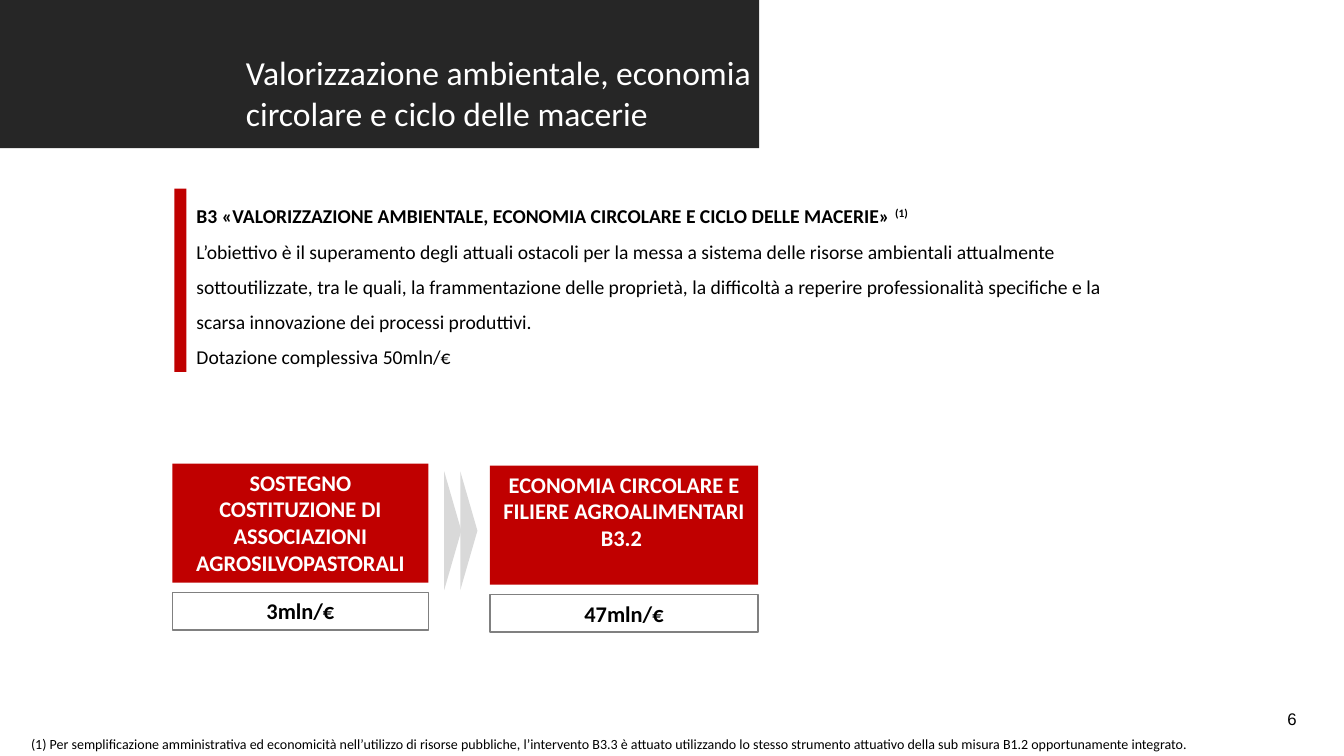
from pptx import Presentation
from pptx.dml.color import RGBColor
from pptx.enum.shapes import MSO_SHAPE
from pptx.enum.text import MSO_ANCHOR, PP_ALIGN
from pptx.util import Inches, Pt

RECTANGLE = MSO_SHAPE.RECTANGLE
TRIANGLE = MSO_SHAPE.ISOSCELES_TRIANGLE
TOP = MSO_ANCHOR.TOP
LEFT, CENTER, RIGHT = PP_ALIGN.LEFT, PP_ALIGN.CENTER, PP_ALIGN.RIGHT

RED, DARK, LIGHT_GRAY, GRAY = "C00000", "262626", "D9D9D9", "808080"
WHITE, BLACK = "FFFFFF", "000000"

TITLE = "Valorizzazione ambientale, economia circolare e ciclo delle macerie"
MEASURE = "B3 «VALORIZZAZIONE AMBIENTALE, ECONOMIA CIRCOLARE E CICLO DELLE MACERIE» "
OBJECTIVE = (
    "L’obiettivo è il superamento degli attuali ostacoli per la messa a sistema delle "
    "risorse ambientali attualmente sottoutilizzate, tra le quali, la frammentazione delle "
    "proprietà, la difficoltà a reperire professionalità specifiche e la scarsa innovazione "
    "dei processi produttivi."
)
BUDGET = "Dotazione complessiva 50mln/€"
FOOTNOTE = (
    "(1) Per semplificazione amministrativa ed economicità nell’utilizzo di risorse pubbliche, "
    "l’intervento B3.3 è attuato utilizzando lo stesso strumento attuativo della sub misura "
    "B1.2 opportunamente integrato."
)
# left, top, width, heading lines, amount
INTERVENTIONS = [
    (1.71, 4.6, 2.54, ["SOSTEGNO COSTITUZIONE DI ASSOCIAZIONI AGROSILVOPASTORALI"], "3mln/€"),
    (4.86, 4.62, 2.66, ["ECONOMIA CIRCOLARE E FILIERE AGROALIMENTARI", "B3.2 "], "47mln/€"),
]
HEADING_HEIGHT = 1.18
AMOUNT_OFFSET = 1.28


def color(hex_value):
    return RGBColor.from_string(hex_value)


def format_run(run, size, text_color, bold=False, font="Calibri"):
    run.font.name = font
    run.font.size = Pt(size)
    run.font.bold = bold
    run.font.color.rgb = color(text_color)


def write(shape, lines, size, text_color, align=LEFT, bold=False, font="Calibri", spacing=None):
    text_frame = shape.text_frame
    text_frame.word_wrap = True
    text_frame.vertical_anchor = TOP
    text_frame.text = "\n".join(lines)
    for paragraph in text_frame.paragraphs:
        paragraph.alignment = align
        if spacing:
            paragraph.line_spacing = spacing
        for run in paragraph.runs:
            format_run(run, size, text_color, bold, font)


def add_text(slide, box, lines, size, text_color, **style):
    shape = slide.shapes.add_textbox(*map(Inches, box))
    write(shape, lines, size, text_color, **style)
    return shape


def add_block(slide, box, fill=None, line=None, kind=RECTANGLE):
    shape = slide.shapes.add_shape(kind, *map(Inches, box))
    shape.shadow.inherit = False
    if fill:
        shape.fill.solid()
        shape.fill.fore_color.rgb = color(fill)
    else:
        shape.fill.background()
    if line:
        shape.line.color.rgb = color(line)
        shape.line.width = Pt(1)
    else:
        shape.line.fill.background()
    return shape


def add_description(slide):
    box = add_text(slide, (1.85, 1.86, 9.48, 1.83), [MEASURE, OBJECTIVE, BUDGET],
                   14, BLACK, spacing=1.5)
    measure = box.text_frame.paragraphs[0]
    reference = measure.add_run()
    reference.text = "(1)"
    for run in measure.runs:
        format_run(run, 14, BLACK, bold=True)
    # python-pptx has no superscript property
    reference.font._element.set("baseline", "30000")
    add_block(slide, (1.73, 1.87, 0.12, 1.82), RED)


def add_intervention(slide, left, top, width, heading, amount):
    heading_box = add_block(slide, (left, top, width, HEADING_HEIGHT), RED)
    write(heading_box, heading, 16, WHITE, align=CENTER, bold=True)
    amount_box = add_block(slide, (left, top + AMOUNT_OFFSET, width, 0.37), line=GRAY)
    write(amount_box, [amount], 16, BLACK, align=CENTER, bold=True)


def add_double_arrow(slide):
    for left in (3.9, 4.06):
        triangle = add_block(slide, (left, 5.18, HEADING_HEIGHT, 0.17), LIGHT_GRAY, kind=TRIANGLE)
        triangle.rotation = 90


def main():
    presentation = Presentation()
    presentation.slide_width = Inches(13.33)
    presentation.slide_height = Inches(7.5)
    slide = presentation.slides.add_slide(presentation.slide_layouts[6])

    add_block(slide, (0, 0, 7.53, 1.47), DARK)
    add_text(slide, (11.63, 6.98, 1.33, 0.52), ["6"], 12, BLACK, align=RIGHT, font="Arial")
    add_text(slide, (2.34, 0.47, 5.35, 0.9), [TITLE], 24, WHITE)
    add_description(slide)
    for intervention in INTERVENTIONS:
        add_intervention(slide, *intervention)
    add_double_arrow(slide)
    add_text(slide, (0.21, 7.25, 12.34, 0.27), [FOOTNOTE], 10, BLACK)

    presentation.save("out.pptx")


if __name__ == "__main__":
    main()
